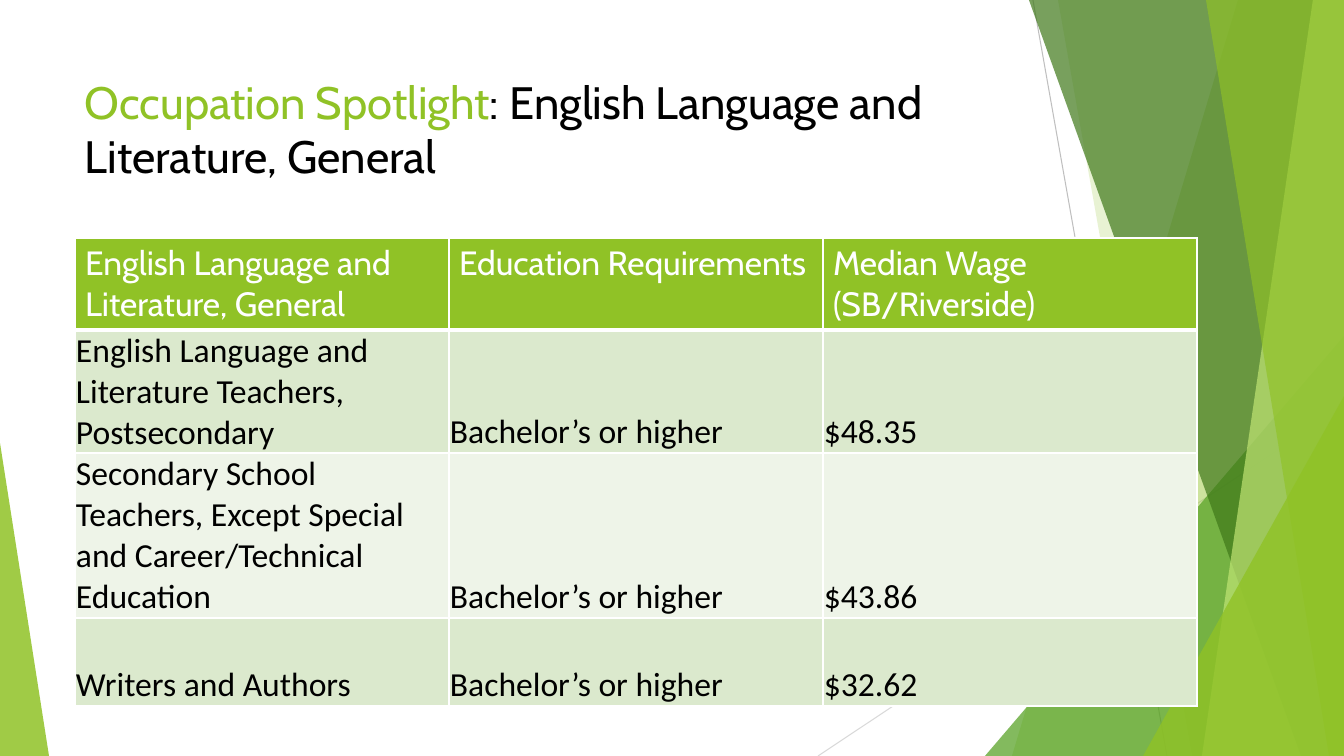
from lxml.etree import SubElement
from pptx import Presentation
from pptx.dml.color import RGBColor
from pptx.enum.shapes import MSO_CONNECTOR as Connector, MSO_SHAPE as Preset
from pptx.enum.text import MSO_ANCHOR as Anchor
from pptx.oxml.ns import qn
from pptx.util import Emu, Pt

SCALE = 914400 / 100.8  # EMU in one px
WIDTH, HEIGHT = 1344, 756

WHITE = RGBColor(0xFF, 0xFF, 0xFF)
BLACK = RGBColor(0x00, 0x00, 0x00)
LIME = RGBColor(0x90, 0xC2, 0x26)
GREEN = RGBColor(0x54, 0xA0, 0x21)
FOREST = RGBColor(0x3F, 0x78, 0x19)
PALE_LIME = RGBColor(0xC0, 0xE4, 0x74)
GREY = RGBColor(0xBF, 0xBF, 0xBF)
LIGHT_GREY = RGBColor(0xD9, 0xD9, 0xD9)
BANDS = (RGBColor(0xDB, 0xE9, 0xCD), RGBColor(0xEE, 0xF4, 0xE8))

TITLE_FONT = {"name": "Cabin", "size": Pt(32.4), "bold": False}
HEADER_FONT = {"name": "Cabin", "size": Pt(24), "bold": False}
BODY_FONT = {"name": "Calibri", "size": Pt(24), "bold": False}
BODY_CELL = {"vertical_anchor": Anchor.BOTTOM, "margin_bottom": 0}

OCCUPATIONS = [
    ("English Language and Literature, General", "Education Requirements",
     "Median Wage (SB/Riverside)"),
    ("English Language and Literature Teachers, Postsecondary",
     "Bachelor’s or higher", "$48.35"),
    ("Secondary School Teachers, Except Special and Career/Technical Education",
     "Bachelor’s or higher", "$43.86"),
    ("Writers and Authors", "Bachelor’s or higher", "$32.62"),
]
ROW_HEIGHTS = (92, 123, 165, 88)
COLUMN_WIDTH = 374


def px(length):
    return Emu(round(length * SCALE))


BODY_CELL.update({f"margin_{side}": px(1) for side in ("left", "top", "right")})


def apply_format(target, values):
    for name, value in values.items():
        setattr(target, name, value)


def add_text(paragraph, words, font, color):
    run = paragraph.add_run()
    run.text = words
    apply_format(run.font, font)
    run.font.color.rgb = color


def add_hairline(slide, start, end, color):
    hairline = slide.shapes.add_connector(
        Connector.STRAIGHT, *map(px, start + end))
    hairline.line.color.rgb = color
    hairline.line.width = Pt(0.75)
    SubElement(hairline._element.spPr, qn("a:effectLst"))


def tint(facet, color, opacity):
    facet.shadow.inherit = False
    facet.line.fill.background()
    facet.fill.solid()
    facet.fill.fore_color.rgb = color
    color_xml = facet._element.spPr.find(qn("a:solidFill"))[0]
    SubElement(color_xml, qn("a:alpha")).set("val", str(opacity * 1000))


def add_facet(slide, top_x, bottom_x, color, opacity):
    """Band from a slanted left edge to the right side of the slide."""
    outline = slide.shapes.build_freeform(top_x, 0, scale=SCALE)
    outline.add_line_segments(
        [(WIDTH, 0), (WIDTH, HEIGHT), (bottom_x, HEIGHT)], close=True)
    tint(outline.convert_to_shape(), color, opacity)


def add_corner(slide, left, top, width, apex, color, opacity):
    """Triangle standing on the bottom edge of the slide."""
    corner = slide.shapes.add_shape(
        Preset.ISOSCELES_TRIANGLE, *map(px, (left, top, width, HEIGHT - top)))
    corner.adjustments[0] = apex
    tint(corner, color, opacity)


def add_border(cell, edge, points):
    border = SubElement(cell._tc.get_or_add_tcPr(), qn(f"a:{edge}"))
    border.set("w", str(Pt(points)))
    fill = SubElement(border, qn("a:solidFill"))
    SubElement(fill, qn("a:srgbClr")).set("val", str(WHITE))


def fill_cell(cell, words, row):
    header = row == 0
    if not header:
        apply_format(cell, BODY_CELL)
    add_text(cell.text_frame.paragraphs[0], words,
             HEADER_FONT if header else BODY_FONT, WHITE if header else BLACK)
    # Borders come before the fill in the cell properties
    widths = {"lnL": 1, "lnR": 1, "lnT": 3 if row == 1 else 1,
              "lnB": 3 if header else 1}
    for edge, points in widths.items():
        add_border(cell, edge, points)
    cell.fill.solid()
    cell.fill.fore_color.rgb = LIME if header else BANDS[(row - 1) % 2]


def add_occupations(slide, left, top):
    columns = len(OCCUPATIONS[0])
    occupations = slide.shapes.add_table(
        len(OCCUPATIONS), columns, px(left), px(top),
        px(COLUMN_WIDTH * columns), px(sum(ROW_HEIGHTS))).table
    apply_format(occupations, {"first_row": False, "horz_banding": False})
    for column in occupations.columns:
        column.width = px(COLUMN_WIDTH)
    for row, (height, entries) in enumerate(zip(ROW_HEIGHTS, OCCUPATIONS)):
        occupations.rows[row].height = px(height)
        for column, words in enumerate(entries):
            fill_cell(occupations.cell(row, column), words, row)


def add_title(slide):
    frame = slide.shapes.add_textbox(*map(px, (75, 69, 948, 145))).text_frame
    frame.word_wrap = True
    heading = frame.paragraphs[0]
    add_text(heading, "Occupation Spotlight", TITLE_FONT, LIME)
    add_text(heading, ": English Language and Literature, General",
             TITLE_FONT, BLACK)


def add_backdrop(slide):
    add_hairline(slide, (1033, 0), (1167, HEIGHT), GREY)
    add_hairline(slide, (WIDTH, 406), (818, HEIGHT), LIGHT_GREY)
    add_facet(slide, 1238, 1012, LIME, 30)
    add_facet(slide, 1058, 1192, LIME, 20)
    add_corner(slide, 985, 336, 359, 1, GREEN, 72)
    add_facet(slide, 1029, 1301, FOREST, 70)
    add_facet(slide, 1313, 1202, PALE_LIME, 70)
    add_facet(slide, 1206, 1329, LIME, 65)
    add_corner(slide, 1143, 396, 201, 1, LIME, 80)
    add_corner(slide, 0, 443, 49, 0, LIME, 85)


def main():
    deck = Presentation()
    apply_format(deck, {"slide_width": px(WIDTH), "slide_height": px(HEIGHT)})
    slide = deck.slides.add_slide(deck.slide_layouts[6])
    add_backdrop(slide)
    add_title(slide)
    add_occupations(slide, 75, 238)
    deck.save("out.pptx")


if __name__ == "__main__":
    main()
